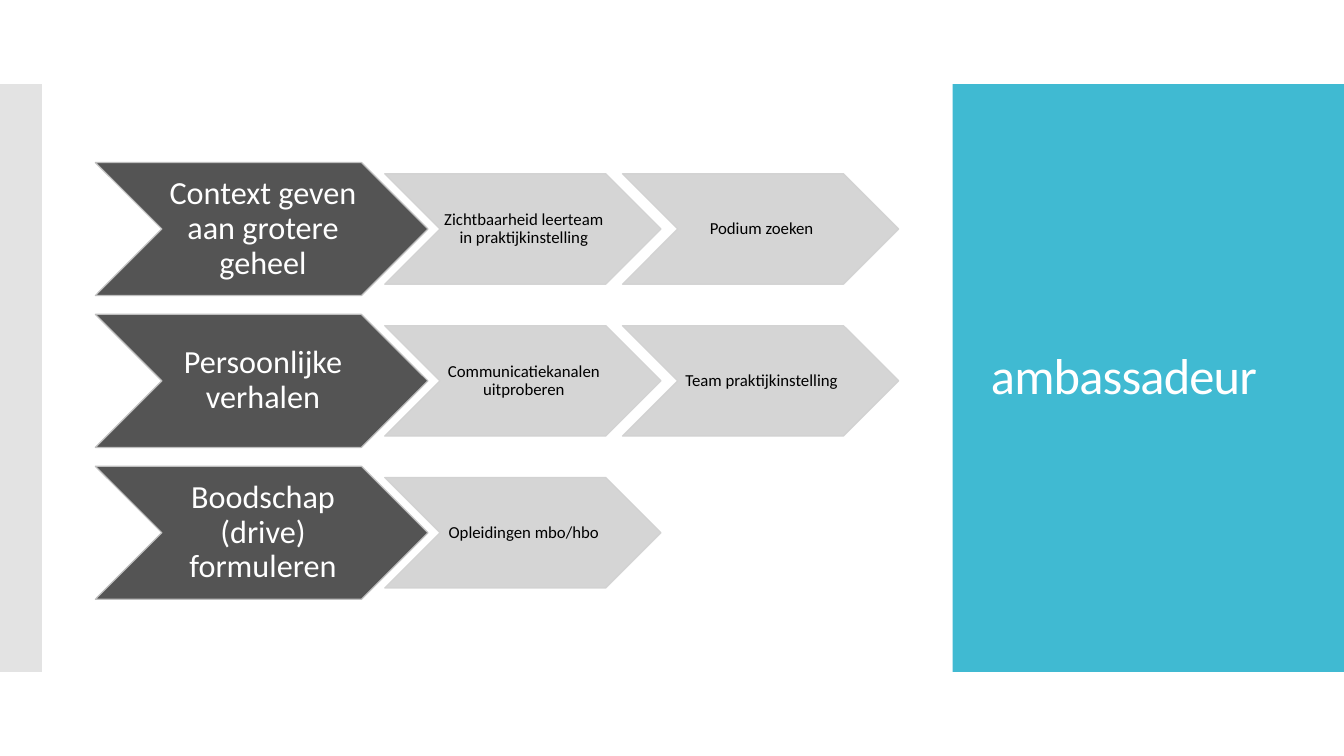
from lxml import etree
from pptx import Presentation
from pptx import util as u
from pptx.dml.color import RGBColor
from pptx.enum import shapes, text
from pptx.oxml.ns import qn

WHITE = RGBColor(0xFF, 0xFF, 0xFF)
BLACK = RGBColor(0x00, 0x00, 0x00)
TEAL = RGBColor(0x40, 0xBA, 0xD2)
MIST = RGBColor(0xC8, 0xC8, 0xC8)
DARK = RGBColor(0x54, 0x54, 0x54)
EDGE = RGBColor(0xBF, 0xBF, 0xBF)
PALE = RGBColor(0xD1, 0xD1, 0xD1)

TITLE = "ambassadeur"
THEMES = [
    ("Context geven aan grotere geheel",
     ["Zichtbaarheid leerteam in praktijkinstelling", "Podium zoeken"]),
    ("Persoonlijke verhalen",
     ["Communicatiekanalen uitproberen", "Team praktijkinstelling"]),
    ("Boodschap (drive) formuleren", ["Opleidingen mbo/hbo"]),
]


class Deck:
    """One slide on a grid of 160 columns by 90 rows."""
    COLS, ROWS, FONT = 160, 90, "Calibri"

    def __init__(self):
        self.prs = Presentation()
        self.prs.slide_width, self.prs.slide_height = u.Inches(13.33), u.Inches(7.5)
        self.s = self.prs.slides.add_slide(self.prs.slide_layouts[6])

    def box(self, col, row, cols, rows):
        """Turn grid units into slide lengths."""
        w, h = self.prs.slide_width / self.COLS, self.prs.slide_height / self.ROWS
        return [u.Emu(round(n)) for n in (col * w, row * h, cols * w, rows * h)]

    def paint(self, fill, color, opacity):
        fill.solid()
        fill.fore_color.rgb = color
        if opacity < 100:
            srgb = fill._xPr.find(f"{qn('a:solidFill')}/{qn('a:srgbClr')}")
            etree.SubElement(srgb, qn("a:alpha"), val=str(opacity * 1000))

    def shape(self, kind, place, color, line=None, opacity=100):
        sp = self.s.shapes.add_shape(kind, *self.box(*place))
        sp.shadow.inherit = False
        self.paint(sp.fill, color, opacity)
        if line is None:
            sp.line.fill.background()
        else:
            sp.line.width = u.Pt(0.85)
            self.paint(sp.line.fill, line, opacity)
        return sp

    def panel(self, place, color, opacity=100):
        return self.shape(shapes.MSO_SHAPE.RECTANGLE, place, color, opacity=opacity)

    def label(self, sp, words, size, color, align, inset):
        tf = sp.text_frame
        side, edge = u.Inches(inset), u.Inches(inset / 2)
        frame = {"word_wrap": True, "vertical_anchor": text.MSO_ANCHOR.MIDDLE,
                 "margin_left": side, "margin_top": edge, "margin_bottom": edge}
        p = tf.paragraphs[0]
        r = p.add_run()
        r.text = words
        r.font.color.rgb = color
        for target, values in (
                (tf, frame),
                (p, {"alignment": align, "line_spacing": 0.9}),
                (r.font, {"name": self.FONT, "size": u.Pt(size)})):
            for name, value in values.items():
                setattr(target, name, value)
        return r

    def chevron(self, place, words, size, color, fill, line, inset, opacity=100):
        sp = self.shape(shapes.MSO_SHAPE.CHEVRON, place, fill, line, opacity)
        self.label(sp, words, size, color, text.PP_ALIGN.CENTER, inset)
        sp.text_frame.margin_right = 0

    def title(self, place, words):
        sp = self.s.shapes.add_textbox(*self.box(*place))
        r = self.label(sp, words, 36, WHITE, text.PP_ALIGN.LEFT, 0.1)
        r.font._element.set("spc", "-60")


def main():
    deck = Deck()
    deck.panel((113.4, 10, 46.6, 70), TEAL)
    deck.title((116.8, 14.8, 38.6, 60.4), TITLE)
    deck.panel((0, 10, 5, 70), MIST, opacity=50)

    big_w, big_h, small_w, small_h = 39.6, 15.84, 32.9, 13.15
    for i, (theme, actions) in enumerate(THEMES):
        top = 19.34 + i * 18.08
        deck.chevron((11.35, top, big_w, big_h), theme, 23, WHITE, DARK, EDGE, 0.03)
        for j, action in enumerate(actions):
            place = (45.8 + j * 28.3, top + (big_h - small_h) / 2, small_w, small_h)
            deck.chevron(place, action, 12, BLACK, PALE, PALE, 0.02, opacity=90)
    deck.prs.save("out.pptx")


if __name__ == "__main__":
    main()
